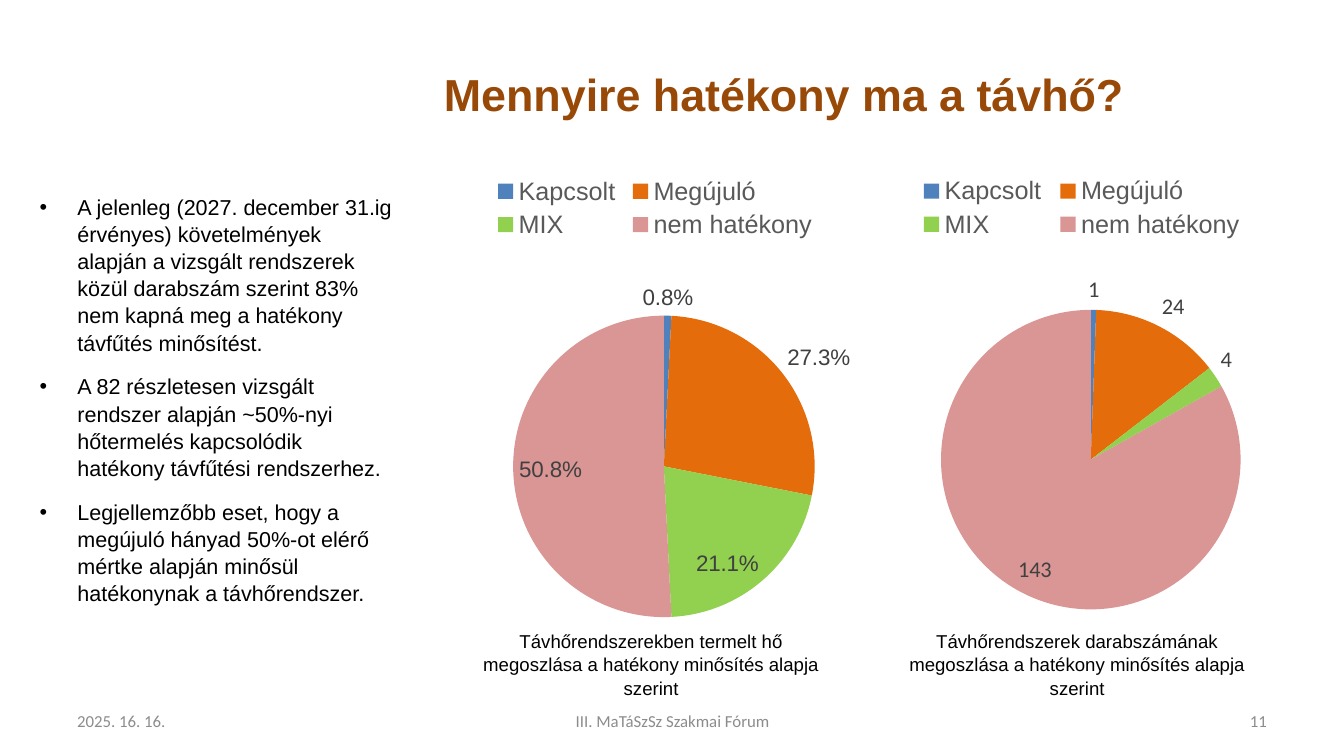
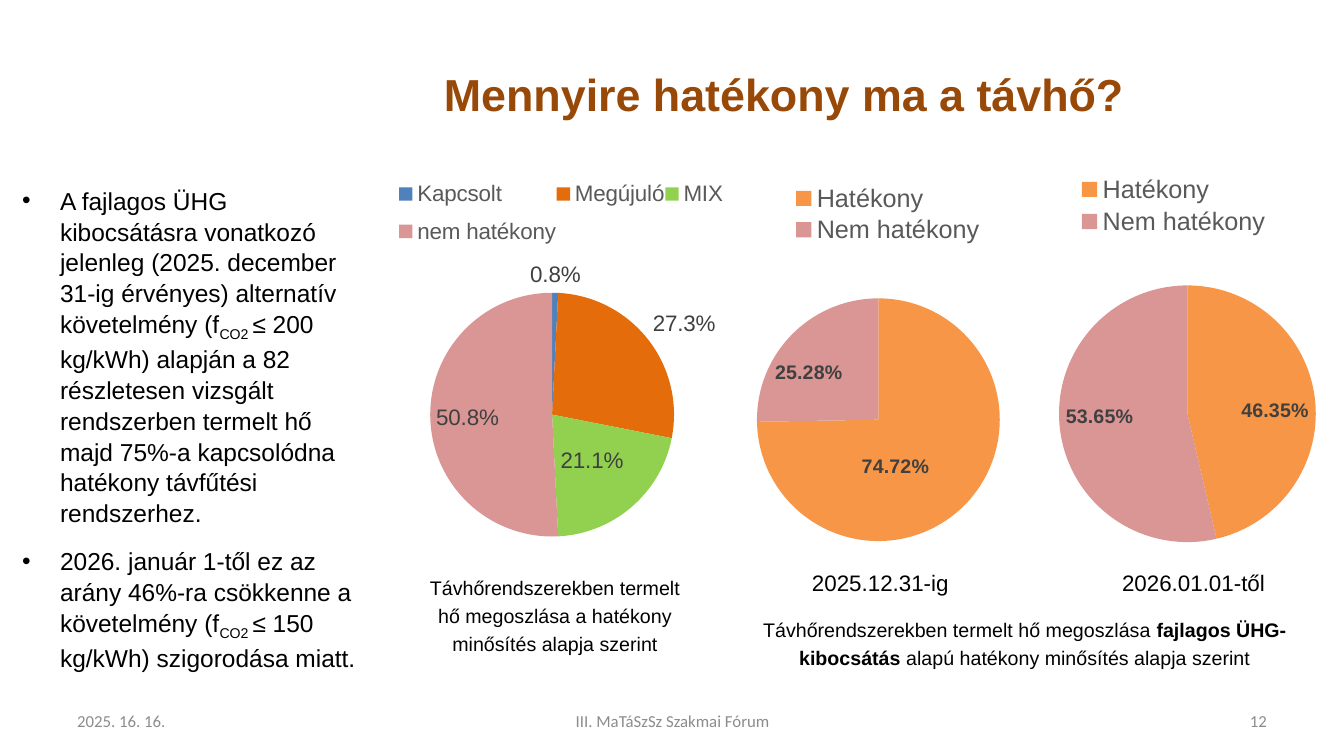
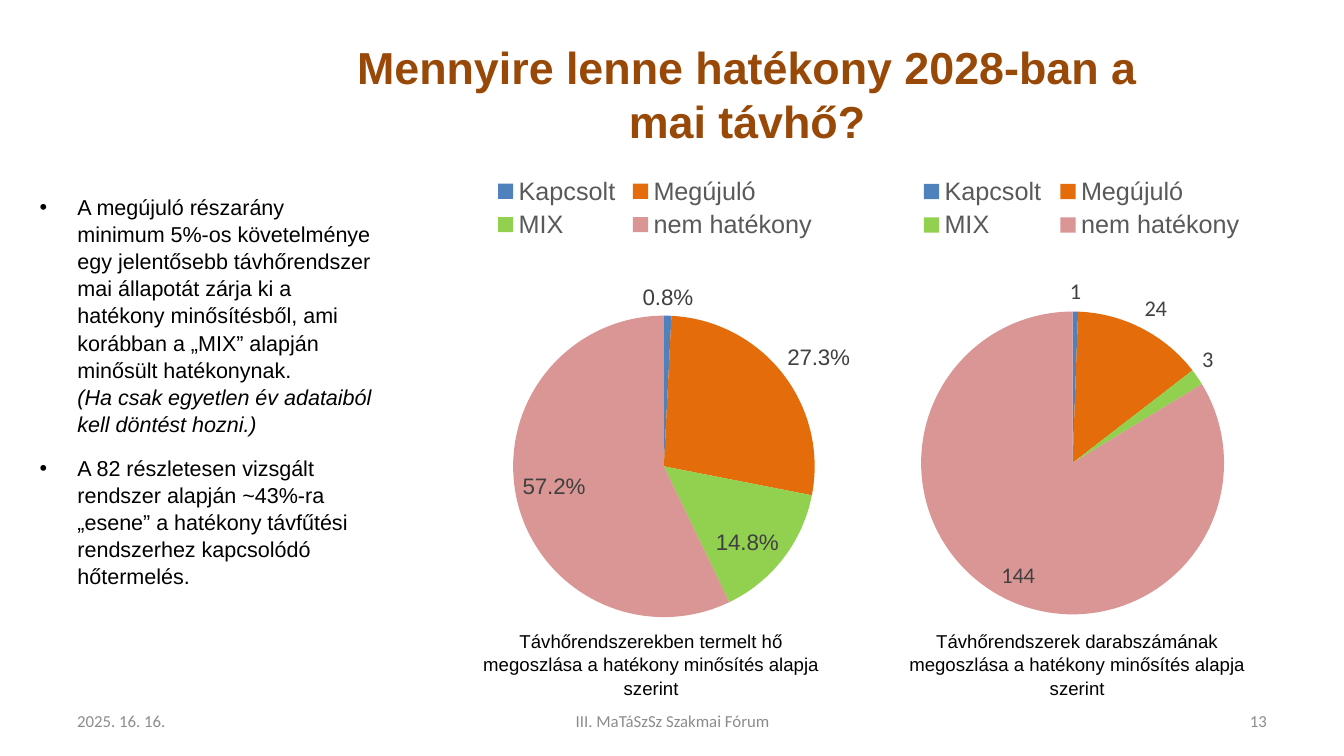
from pptx import Presentation
from pptx.chart.data import CategoryChartData
from pptx.dml.color import RGBColor
from pptx.enum.chart import XL_CHART_TYPE as ChartType, XL_LABEL_POSITION as Spot
from pptx.enum.chart import XL_LEGEND_POSITION as LegendSpot
from pptx.enum.text import MSO_ANCHOR as Anchor, MSO_AUTO_SIZE as AutoSize, PP_ALIGN as Align
from pptx.oxml import parse_xml
from pptx.oxml.ns import nsdecls, qn
from pptx.util import Inches, Pt

COLORS = {
    "title": "984807", "text": "000000", "footer": "8C8C8C",
    "legend": "595959", "label": "404040",
    "Kapcsolt": "4F81BD", "Megújuló": "E46C0A", "MIX": "92D050", "nem hatékony": "D99694",
    "Hatékony": "F79646", "Nem hatékony": "D99694",
}
SOURCES = ["Kapcsolt", "Megújuló", "MIX", "nem hatékony"]
RATINGS = ["Hatékony", "Nem hatékony"]
HEAT_CAPTION = "Távhőrendszerekben termelt hő megoszlása a hatékony minősítés alapja szerint"
COUNT_CAPTION = "Távhőrendszerek darabszámának megoszlása a hatékony minősítés alapja szerint"
TODAY_TITLE = "Mennyire hatékony ma a távhő?"
BREAK = "\n"


def style_font(font, size, color, name="Arial", bold=False):
    font.size, font.name, font.bold = Pt(size), name, bold
    font.color.rgb = RGBColor.from_string(COLORS[color])


def set_layout(parent, index, sizes, edge=True, inner=False):
    """Give a chart part a manual layout, in shares of the chart."""
    for old in parent.findall(qn("c:layout")):
        parent.remove(old)
    parts = '<c:layoutTarget val="inner"/>' if inner else ""
    if edge:
        parts += '<c:xMode val="edge"/><c:yMode val="edge"/>'
    parts += "".join(f'<c:{side} val="{size}"/>' for side, size in zip("xywh", sizes))
    parent.insert(index, parse_xml(
        f'<c:layout {nsdecls("c")}><c:manualLayout>{parts}</c:manualLayout></c:layout>'))


class Deck:
    """Holds the style and the current slide; boxes are percentages of the slide."""

    def __init__(self):
        self.prs = Presentation()
        self.prs.slide_width, self.prs.slide_height = Inches(13.33), Inches(7.5)
        self.slide = None

    def box(self, shares):
        lengths = (self.prs.slide_width, self.prs.slide_height) * 2
        return [round(length * share / 100) for length, share in zip(lengths, shares)]

    def fill_text(self, frame, paragraphs, size, color="text", font="Arial", bold=False,
                  align=Align.LEFT, spacing=1.0, after=0):
        """Each paragraph is a list of pieces: text, BREAK, or (text, mark)."""
        frame.word_wrap = True
        frame.auto_size = AutoSize.NONE
        for number, pieces in enumerate(paragraphs):
            paragraph = frame.add_paragraph() if number else frame.paragraphs[0]
            paragraph.alignment, paragraph.line_spacing = align, spacing
            paragraph.space_before, paragraph.space_after = Pt(0), Pt(after)
            for piece in pieces:
                if piece == BREAK:
                    paragraph.add_line_break()
                    continue
                words, mark = piece if isinstance(piece, tuple) else (piece, "")
                run = paragraph.add_run()
                run.text = words
                style_font(run.font, size, color, font, bold or mark == "bold")
                if mark == "italic":
                    run.font.italic = True
                if mark == "sub":
                    run.font._element.set("baseline", "-25000")

    def place(self, placeholder, shares):
        placeholder.left, placeholder.top, placeholder.width, placeholder.height = self.box(shares)
        return placeholder.text_frame

    def new_slide(self, number, title, title_box):
        self.slide = self.prs.slides.add_slide(self.prs.slide_layouts[1])
        frame = self.place(self.slide.shapes.title, title_box)
        frame.vertical_anchor = Anchor.MIDDLE
        self.fill_text(frame, [[title]], 32, "title", bold=True, align=Align.CENTER)
        footers = [(5, 23.3, "2025. 16. 16.", Align.LEFT),
                   (34.2, 31.7, "III. MaTáSzSz Szakmai Fórum", Align.CENTER),
                   (71.7, 23.3, str(number), Align.RIGHT)]
        for left, width, words, align in footers:
            self.text([words], (left, 92.7, width, 5.3), 12, "footer", "Calibri", align,
                      anchor=Anchor.MIDDLE)

    def bullets(self, paragraphs, shares, size):
        frame = self.place(self.slide.placeholders[1], shares)
        self.fill_text(frame, paragraphs, size, spacing=1.05, after=12)

    def text(self, pieces, shares, size, color="text", font="Arial", align=Align.CENTER,
             spacing=1.0, anchor=Anchor.TOP):
        frame = self.slide.shapes.add_textbox(*self.box(shares)).text_frame
        frame.vertical_anchor = anchor
        self.fill_text(frame, [pieces], size, color, font, align=align, spacing=spacing)

    def pie(self, shares, names, values, spots, plot_box, legend_box, number_format="0.0%",
            legend_size=18, label_size=16, label_font="Arial", bold=False, offsets=()):
        """Draw a pie; offsets shift its labels, one (x, y) for each slice."""
        data = CategoryChartData(number_format=number_format)
        data.categories = names
        data.add_series("Series 1", values)
        chart = self.slide.shapes.add_chart(ChartType.PIE, *self.box(shares), data).chart
        chart.has_title = False
        style_font(chart.font, label_size, "text", label_font)
        chart.has_legend = True
        chart.legend.position = LegendSpot.TOP
        chart.legend.include_in_layout = False
        style_font(chart.legend.font, legend_size, "legend")

        plot = chart.plots[0]
        plot.vary_by_categories = True
        series = plot.series[0]
        labels = series.data_labels
        labels.show_value = True
        labels.number_format, labels.number_format_is_linked = number_format, False
        style_font(labels.font, label_size, "label", label_font, bold)
        for index, (name, spot) in enumerate(zip(names, spots)):
            point = series.points[index]
            point.format.fill.solid()
            point.format.fill.fore_color.rgb = RGBColor.from_string(COLORS[name])
            point.format.line.fill.background()
            style_font(point.data_label.font, label_size, "label", label_font, bold)
            point.data_label.position = spot

        root = chart.element
        set_layout(root.find(".//" + qn("c:plotArea")), 0, plot_box, inner=True)
        set_layout(root.find(".//" + qn("c:legend")), 1, legend_box)
        for label, offset in zip(list(root.iter(qn("c:dLbl"))), offsets):
            set_layout(label, 1, offset, edge=False)
        root.find(qn("c:chart")).addnext(parse_xml(
            f'<c:spPr {nsdecls("c", "a")}><a:noFill/><a:ln><a:noFill/></a:ln></c:spPr>'))

    def heat_and_count(self, heat, counts, count_height, count_plot):
        """Two captioned pies: produced heat on the left, number of systems on the right."""
        out, inside = Spot.OUTSIDE_END, Spot.INSIDE_END
        legend_box = (0.14, 0.02, 0.74, 0.15)
        self.pie((31.7, 21.5, 33.4, 63.3), SOURCES, heat, (out, out, inside, inside),
                 (0.16, 0.32, 0.74, 0.63), legend_box)
        self.pie((63.2, 21.5, 33.9, count_height), SOURCES, counts, (out, out, out, inside),
                 count_plot, legend_box, "General", label_font="Calibri")
        for left, caption in ((34.2, HEAT_CAPTION), (65.9, COUNT_CAPTION)):
            self.text([caption], (left, 82.5, 28.5, 10.1), 13.3, spacing=1.05)


def main():
    deck = Deck()
    wide_title = (22.3, 4, 72.1, 16.7)

    deck.new_slide(11, TODAY_TITLE, wide_title)
    deck.bullets([
        ["A jelenleg (2027. december 31.ig érvényes) követelmények alapján a vizsgált rendszerek "
         "közül darabszám szerint 83% nem kapná meg a hatékony távfűtés minősítést."],
        ["A 82 részletesen vizsgált rendszer alapján ~50%-nyi hőtermelés kapcsolódik hatékony "
         "távfűtési rendszerhez."],
        ["Legjellemzőbb eset, hogy a megújuló hányad 50%-ot elérő mértke alapján minősül "
         "hatékonynak a távhőrendszer."],
    ], (2.2, 24.8, 27.9, 65), 15.4)
    today_heat = (0.008, 0.273, 0.211, 0.508)
    deck.heat_and_count(today_heat, (1, 24, 4, 143), 62.9, (0.17, 0.31, 0.72, 0.63))

    deck.new_slide(12, TODAY_TITLE, wide_title)
    deck.bullets([
        ["A fajlagos ÜHG kibocsátásra vonatkozó jelenleg (2025. december 31-ig érvényes) "
         "alternatív követelmény (f", ("CO2 ", "sub"),
         "≤ 200 kg/kWh) alapján a 82 részletesen vizsgált rendszerben termelt hő majd 75%-a "
         "kapcsolódna hatékony távfűtési rendszerhez."],
        ["2026. január 1-től ez az arány 46%-ra csökkenne a követelmény (f", ("CO2 ", "sub"),
         "≤ 150 kg/kWh) szigorodása miatt."],
    ], (0.9, 23.7, 26.8, 68.9), 17.5)
    deck.pie((27.8, 20, 26.3, 58.1), SOURCES, today_heat,
             (Spot.OUTSIDE_END, Spot.OUTSIDE_END, Spot.CENTER, Spot.INSIDE_END),
             (0.16, 0.32, 0.69, 0.56), (0.07, 0.04, 0.92, 0.2), legend_size=16)
    rating_style = dict(plot_box=(0.17, 0.28, 0.65, 0.65), number_format="0.00%",
                        label_size=14, bold=True)
    deck.pie((51.6, 20.5, 27.8, 57.9), RATINGS, (0.7472, 0.2528), (Spot.CENTER,) * 2,
             legend_box=(0.26, 0.06, 0.52, 0.15), offsets=((-0.07, 0.01), (-0.07, -0.01)),
             **rating_style)
    deck.pie((73.8, 18.5, 29.4, 59.9), RATINGS, (0.4635, 0.5365), (Spot.INSIDE_END,) * 2,
             legend_box=(0.21, 0.07, 0.5, 0.15), **rating_style)
    deck.text([HEAT_CAPTION], (30.6, 74.9, 21.4, 15.1), 14, spacing=1.2)
    for left, period in ((54, "2025.12.31-ig"), (77.3, "2026.01.01-től")):
        deck.text([period], (left, 73.9, 23, 6.4), 16, spacing=1.2)
    deck.text(["Távhőrendszerekben termelt hő megoszlása ", ("fajlagos ÜHG-kibocsátás ", "bold"),
               "alapú hatékony minősítés alapja szerint"], (53, 80.4, 46.5, 10.1), 14, spacing=1.2)

    deck.new_slide(13, "Mennyire lenne hatékony 2028-ban a mai távhő?", (24, 4, 63.2, 16.7))
    deck.bullets([
        ["A megújuló részarány minimum 5%-os követelménye egy jelentősebb távhőrendszer mai "
         "állapotát zárja ki a hatékony minősítésből, ami korábban a „MIX” alapján minősült "
         "hatékonynak.", BREAK,
         ("(Ha csak egyetlen év adataiból kell döntést hozni.)", "italic")],
        ["A 82 részletesen vizsgált rendszer alapján ~43%-ra „esene” a hatékony távfűtési "
         "rendszerhez kapcsolódó hőtermelés."],
    ], (2.2, 24.8, 26.2, 65), 15.4)
    deck.heat_and_count((0.008, 0.273, 0.148, 0.572), (1, 24, 3, 144), 63.6,
                        (0.13, 0.31, 0.72, 0.63))

    deck.prs.save("out.pptx")


if __name__ == "__main__":
    main()
